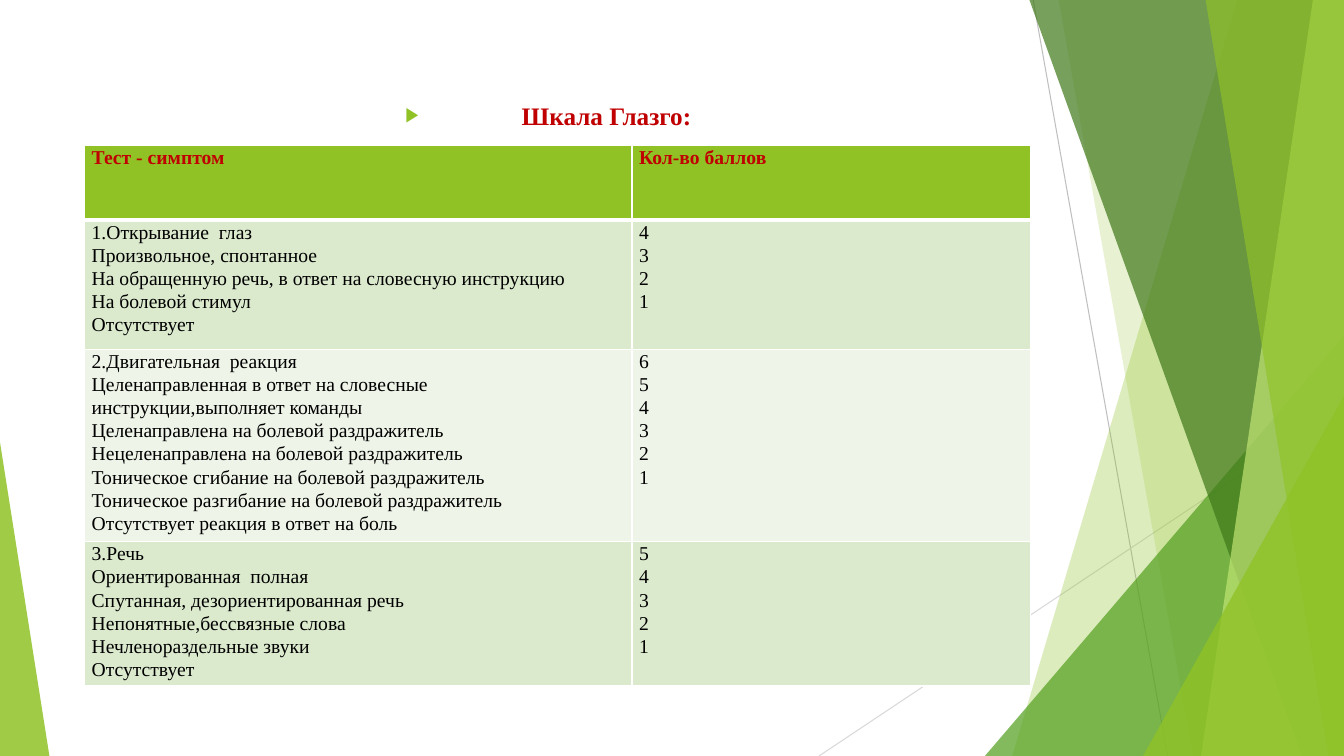
import pptx
import pptx.util
import pptx.dml.color
import pptx.enum.shapes
import pptx.enum.text
import pptx.oxml.xmlchemy

Pt = pptx.util.Pt
make = pptx.oxml.xmlchemy.OxmlElement
FONT = "Times New Roman"
WIDE, HIGH, TOP = 960, 540, -0.6
HUES = {
    "lime": "90C226", "green": "54A021", "dark": "3F7819", "pale": "C0E474",
    "red": "C00000", "black": "000000", "white": "FFFFFF",
    "band": "DBE9CD", "light": "EEF4E8", "gray": "BFBFBF", "mist": "D9D9D9",
}
ROWS = [
    (53.3, "lime", ["Тест - симптом"], ["Кол-во баллов"]),
    (92.2, "band", [
        "1.Открывание  глаз",
        "Произвольное, спонтанное",
        "На обращенную речь, в ответ на словесную инструкцию",
        "На болевой стимул",
        "Отсутствует",
    ], "4321"),
    (137.5, "light", [
        "2.Двигательная  реакция",
        "Целенаправленная в ответ на словесные инструкции,выполняет команды",
        "Целенаправлена на болевой раздражитель",
        "Нецеленаправлена на болевой раздражитель",
        "Тоническое сгибание на болевой раздражитель",
        "Тоническое разгибание на болевой раздражитель",
        "Отсутствует реакция в ответ на боль",
    ], "654321"),
    (103, "band", [
        "3.Речь",
        "Ориентированная  полная",
        "Спутанная, дезориентированная речь",
        "Непонятные,бессвязные слова",
        "Нечленораздельные звуки",
        "Отсутствует",
    ], "54321"),
]


def tint(name):
    return pptx.dml.color.RGBColor.from_string(HUES[name])


def node(tag, **attrs):
    item = make(tag)
    for key, val in attrs.items():
        item.set(key, str(val))
    return item


def paint(shape, hue, alpha):
    shape.shadow.inherit = False
    shape.line.fill.background()
    shape.fill.solid()
    shape.fill.fore_color.rgb = tint(hue)
    color = shape.element.xpath("./p:spPr/a:solidFill/a:srgbClr")[0]
    color.append(node("a:alpha", val=alpha * 1000))


def line(slide, ends, hue):
    link = slide.shapes.add_connector(
        pptx.enum.shapes.MSO_CONNECTOR.STRAIGHT, *map(Pt, ends))
    link.line.color.rgb = tint(hue)
    link.line.width = Pt(0.75)
    link.element.spPr.append(node("a:effectLst"))


def blade(slide, head, foot, hue, alpha):
    form = slide.shapes.build_freeform(head, TOP, scale=Pt(1))
    form.add_line_segments([(WIDE, TOP), (WIDE, HIGH), (foot, HIGH)])
    paint(form.convert_to_shape(), hue, alpha)


def wedge(slide, left, top, width, tip, hue, alpha):
    shape = slide.shapes.add_shape(
        pptx.enum.shapes.MSO_SHAPE.ISOSCELES_TRIANGLE,
        Pt(left), Pt(top), Pt(width), Pt(HIGH - top))
    shape.adjustments[0] = tip
    paint(shape, hue, alpha)


def write(para, text, size, hue, bold):
    run = para.add_run()
    run.text = text
    run.font.name = FONT
    run.font.size = Pt(size)
    run.font.bold = bold
    run.font.color.rgb = tint(hue)


def heading(slide, text):
    body = slide.placeholders[1]
    body.left, body.top = Pt(53.3), Pt(67.7)
    body.width, body.height = Pt(676.8), Pt(407.5)
    para = body.text_frame.paragraphs[0]
    para.alignment = pptx.enum.text.PP_ALIGN.CENTER
    para.space_before = Pt(10)
    write(para, text, 18, "red", True)
    props = para._p.get_or_add_pPr()
    props.set("marL", str(Pt(83)))
    props.set("indent", str(-Pt(83)))
    color = node("a:buClr")
    color.append(node("a:srgbClr", val=HUES["lime"]))
    props.append(color)
    props.append(node("a:buSzPct", val=80000))
    props.append(node("a:buChar", char="▶"))


def edge(cell, side, width):
    rule = node("a:ln" + side, w=Pt(width))
    fill = node("a:solidFill")
    fill.append(node("a:srgbClr", val=HUES["white"]))
    rule.append(fill)
    cell._tc.get_or_add_tcPr().append(rule)


def fill_cell(cell, texts, hue, row):
    cell.margin_left = cell.margin_right = Pt(5)
    cell.margin_top = cell.margin_bottom = 0
    thick = {"T": 3 if row == 1 else 1, "B": 3 if row == 0 else 1}
    for side in "LRTB":
        edge(cell, side, thick.get(side, 1))
    cell.fill.solid()
    cell.fill.fore_color.rgb = tint(hue)
    frame = cell.text_frame
    for i, text in enumerate(texts):
        para = frame.add_paragraph() if i else frame.paragraphs[0]
        para.line_spacing = 1.07
        write(para, text, 14, "black" if row else "red", row == 0)


def scale(slide):
    widths = (391, 284.4)
    total = sum(row[0] for row in ROWS)
    table = slide.shapes.add_table(
        len(ROWS), len(widths), Pt(60.5), Pt(104),
        Pt(sum(widths)), Pt(total)).table
    table.horz_banding = False
    for col, width in zip(table.columns, widths):
        col.width = Pt(width)
    for r, (height, hue, *cells) in enumerate(ROWS):
        table.rows[r].height = Pt(height)
        for c, texts in enumerate(cells):
            fill_cell(table.cell(r, c), texts, hue, r)


def decor(slide):
    line(slide, (738, 0, 834, HIGH), "gray")
    line(slide, (WIDE, 290, 585, HIGH), "mist")
    blade(slide, 884, 723, "lime", 30)
    blade(slide, 756, 852, "lime", 20)
    wedge(slide, 703.5, 240, 256.5, 1, "green", 72)
    blade(slide, 735, 929.5, "dark", 70)
    blade(slide, 938, 858.5, "pale", 70)
    blade(slide, 861, 949, "lime", 65)
    wedge(slide, 816.5, 283, 143.5, 1, "lime", 80)
    wedge(slide, 0, 316, 35.3, 0, "lime", 85)


def main():
    deck = pptx.Presentation()
    deck.slide_width, deck.slide_height = Pt(WIDE), Pt(HIGH)
    slide = deck.slides.add_slide(deck.slide_layouts[1])
    title = slide.shapes.title.element
    title.getparent().remove(title)
    decor(slide)
    heading(slide, "Шкала Глазго:")
    scale(slide)
    deck.save("out.pptx")


if __name__ == "__main__":
    main()
